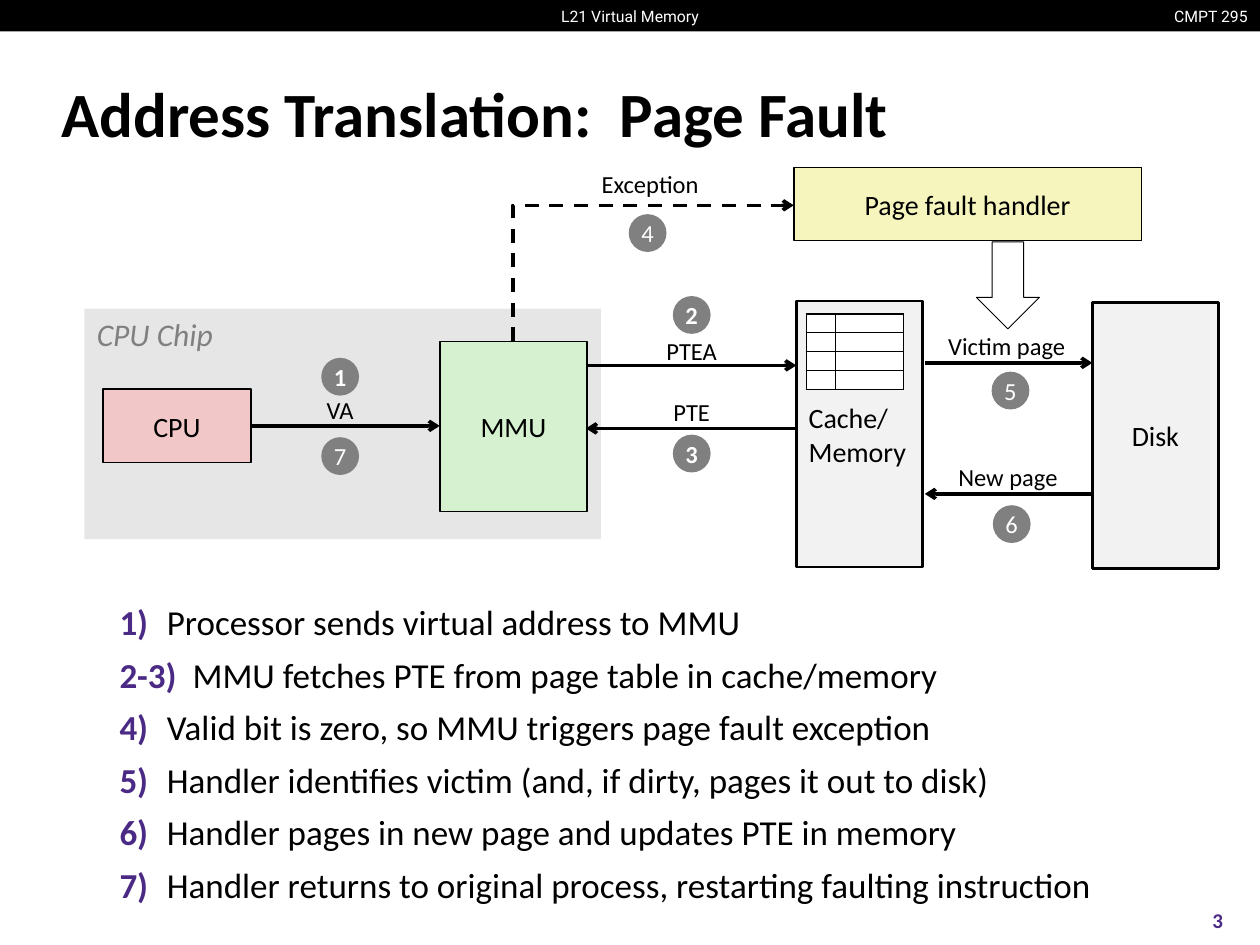
from lxml.etree import SubElement
from pptx import Presentation
from pptx.dml.color import RGBColor
from pptx.enum.dml import MSO_LINE
from pptx.enum.shapes import MSO_CONNECTOR, MSO_SHAPE
from pptx.enum.text import MSO_ANCHOR, PP_ALIGN
from pptx.oxml.ns import qn
from pptx.util import Inches, Pt

BLACK = RGBColor(0, 0, 0)
WHITE = RGBColor(255, 255, 255)
GRAY = RGBColor(0x80, 0x80, 0x80)
CHIP = RGBColor(0xE6, 0xE6, 0xE6)
PALE = RGBColor(0xF2, 0xF2, 0xF2)
GREEN = RGBColor(0xD5, 0xF1, 0xCF)
PINK = RGBColor(0xF1, 0xC7, 0xC7)
YELLOW = RGBColor(0xF6, 0xF5, 0xBD)
PURPLE = RGBColor(0x4B, 0x2A, 0x85)

LEFT, MID, RIGHT = PP_ALIGN.LEFT, PP_ALIGN.CENTER, PP_ALIGN.RIGHT
COLS, ROWS = 100, 75
UNIT = Inches(10) // COLS

HEAD = {"name": "Roboto", "size": Pt(9)}
TITLE = {"name": "Calibri", "size": Pt(36), "bold": True}
CHIP_TEXT = {"name": "Calibri", "size": Pt(18), "italic": True}
BOX = {"name": "Calibri", "size": Pt(16)}
LABEL = {"name": "Calibri", "size": Pt(14)}
BADGE = LABEL | {"bold": True}
STEP = {"name": "Calibri", "size": Pt(20)}
PAGE = {"name": "Calibri", "size": Pt(12), "bold": True}

# Centre column and row of each numbered badge
BADGES = [(27, 29.9), (54.9, 25), (54.9, 36), (51.4, 18.5),
          (80.2, 31), (80.3, 41.6), (27, 36.2)]
# Label, centre column and row
LABELS = [("VA", 27, 32.5), ("PTEA", 54.9, 27.8), ("PTE", 54.9, 32.7),
          ("Victim page", 79.9, 27.4), ("New page", 80, 37.8),
          ("Exception", 51.6, 14.6)]
# Start column, end column and row
ARROWS = [(19.9, 34.9, 33.8), (46.5, 63.2, 29), (63.2, 46.5, 34),
          (73.4, 86.7, 28.8), (86.7, 73.4, 39.2)]
# Number, hanging indent in columns, wording
STEPS = [
    ("1)", 3.75, "Processor sends virtual address to MMU"),
    ("2-3)", 5.8, "MMU fetches PTE from page table in cache/memory"),
    ("4)", 3.75, "Valid bit is zero, so MMU triggers page fault exception"),
    ("5)", 3.75, "Handler identifies victim (and, if dirty, pages it out to disk)"),
    ("6)", 3.75, "Handler pages in new page and updates PTE in memory"),
    ("7)", 3.75, "Handler returns to original process, restarting faulting instruction"),
]


def grid(*spans):
    return [round(span * UNIT) for span in spans]


def add_run(para, text, ink, form):
    run = para.add_run()
    run.text = text
    for key, value in form.items():
        setattr(run.font, key, value)
    run.font.color.rgb = ink


def write(frame, text, form, ink=BLACK, align=MID, anchor=MSO_ANCHOR.MIDDLE):
    """Put one paragraph per line of text into the frame."""
    frame.word_wrap = False
    frame.vertical_anchor = anchor
    for num, line in enumerate(text.split("\n")):
        para = frame.add_paragraph() if num else frame.paragraphs[0]
        para.alignment = align
        add_run(para, line, ink, form)


def add_text(slide, area, text, form, **style):
    box = slide.shapes.add_textbox(*grid(*area))
    write(box.text_frame, text, form, **style)


def add_box(slide, area, fill=None, edge=0, kind=MSO_SHAPE.RECTANGLE):
    box = slide.shapes.add_shape(kind, *grid(*area))
    box.shadow.inherit = False
    if fill is None:
        box.fill.background()
    else:
        box.fill.solid()
        box.fill.fore_color.rgb = fill
    if edge:
        box.line.color.rgb = BLACK
        box.line.width = Pt(edge)
    else:
        box.line.fill.background()
    return box.text_frame


def add_arrow(slide, start, end, kind=MSO_CONNECTOR.STRAIGHT):
    link = slide.shapes.add_connector(kind, *grid(*start, *end))
    link.line.color.rgb = BLACK
    link.line.width = Pt(2)
    SubElement(link.line._get_or_add_ln(), qn("a:tailEnd"), type="arrow")
    SubElement(link._element.spPr, qn("a:effectLst"))
    return link


def add_bend(slide, start, end):
    """Draw a dashed arrow that goes up first, then right."""
    (left, low), (right, top) = start, end
    mid_x, mid_y = (left + right) / 2, (low + top) / 2
    half_w, half_h = (right - left) / 2, (low - top) / 2
    link = add_arrow(slide, (mid_x + half_h, mid_y + half_w),
                     (mid_x - half_h, mid_y - half_w), MSO_CONNECTOR.ELBOW)
    link.line.dash_style = MSO_LINE.DASH
    props = link._element.spPr
    props.find(qn("a:xfrm")).set("rot", str(90 * 60000))
    props.find(qn("a:prstGeom")).set("prst", "bentConnector2")


def add_border(cell):
    props = cell._tc.get_or_add_tcPr()
    for num, side in enumerate(("lnL", "lnR", "lnT", "lnB")):
        line = props.makeelement(qn(f"a:{side}"), {"w": str(Pt(1))})
        fill = SubElement(line, qn("a:solidFill"))
        SubElement(fill, qn("a:srgbClr"), val=str(BLACK))
        props.insert(num, line)


def add_grid(slide, area, widths, count):
    """Add the empty page table held in memory."""
    table = slide.shapes.add_table(count, len(widths), *grid(*area)).table
    table.first_row = table.horz_banding = False
    for col, width in zip(table.columns, grid(*widths)):
        col.width = width
    for cell in table.iter_cells():
        for side in ("left", "right", "top", "bottom"):
            setattr(cell, f"margin_{side}", 0)
        cell.fill.solid()
        cell.fill.fore_color.rgb = WHITE
        add_border(cell)
        SubElement(cell.text_frame.paragraphs[0]._p, qn("a:endParaRPr"), sz="400")


def add_steps(slide, area):
    frame = slide.shapes.add_textbox(*grid(*area)).text_frame
    frame.word_wrap = True
    for num, (mark, hang, text) in enumerate(STEPS):
        para = frame.add_paragraph() if num else frame.paragraphs[0]
        para.line_spacing = 0.73
        para.space_before = Pt(12.5 if num else 0)
        props = para._p.get_or_add_pPr()
        indent, = grid(hang)
        props.set("marL", str(indent))
        props.set("indent", str(-indent))
        add_run(para, mark, PURPLE, STEP | {"bold": True})
        add_run(para, "\t" + text, BLACK, STEP)


def add_frame(slide):
    """Add the top bar, the title and the page number."""
    add_box(slide, (0, 0, COLS, 2.5), BLACK)
    add_text(slide, (91.9, 0, 8.1, 2.5), "CMPT 295", HEAD, ink=WHITE, align=RIGHT)
    add_text(slide, (43.5, 0, 13, 2.5), "L21 Virtual Memory", HEAD, ink=WHITE)
    add_text(slide, (3.9, 4.8, 91.9, 8.3), "Address Translation:  Page Fault",
             TITLE, align=LEFT)
    add_text(slide, (93.3, 71, 6.7, 4), "3", PAGE, ink=PURPLE)


def add_parts(slide):
    add_box(slide, (6.7, 24.5, 41, 18.3), CHIP)
    add_text(slide, (6.7, 24.5, 11.3, 4), "CPU Chip", CHIP_TEXT, ink=GRAY, align=LEFT)
    for area, fill, edge, text, align in [
        ((34.9, 27.1, 11.7, 13.5), GREEN, 1, "MMU", MID),
        ((63.2, 23.9, 10, 21.1), PALE, 1.5, "Cache/\nMemory", LEFT),
        ((8.2, 30.9, 11.7, 5.8), PINK, 1, "CPU", MID),
        ((86.7, 24, 10, 21.1), PALE, 1.5, "Disk", MID),
        ((63, 13.3, 27.6, 5.8), YELLOW, 1, "Page fault handler", MID),
    ]:
        write(add_box(slide, area, fill, edge), text, BOX, align=align)
    add_box(slide, (77.5, 19.2, 5, 6.9), edge=0.5, kind=MSO_SHAPE.DOWN_ARROW)
    add_grid(slide, (64, 24.9, 7.7, 6), (2.3, 5.4), 4)


def add_flow(slide):
    for start, end, row in ARROWS:
        add_arrow(slide, (start, row), (end, row))
    add_bend(slide, (40.7, 27.1), (63, 16.3))
    for text, col, row in LABELS:
        add_text(slide, (col - 6, row - 1.65, 12, 3.3), text, LABEL)
    for num, (col, row) in enumerate(BADGES, 1):
        disc = add_box(slide, (col - 1.5, row - 1.5, 3, 3), GRAY, kind=MSO_SHAPE.OVAL)
        write(disc, str(num), BADGE if num < 4 else LABEL, WHITE)


def main():
    deck = Presentation()
    deck.slide_width, deck.slide_height = grid(COLS, ROWS)
    slide = deck.slides.add_slide(deck.slide_layouts[6])
    add_frame(slide)
    add_parts(slide)
    add_flow(slide)
    add_steps(slide, (8.5, 48, 91.5, 25))
    deck.save("out.pptx")


if __name__ == "__main__":
    main()
